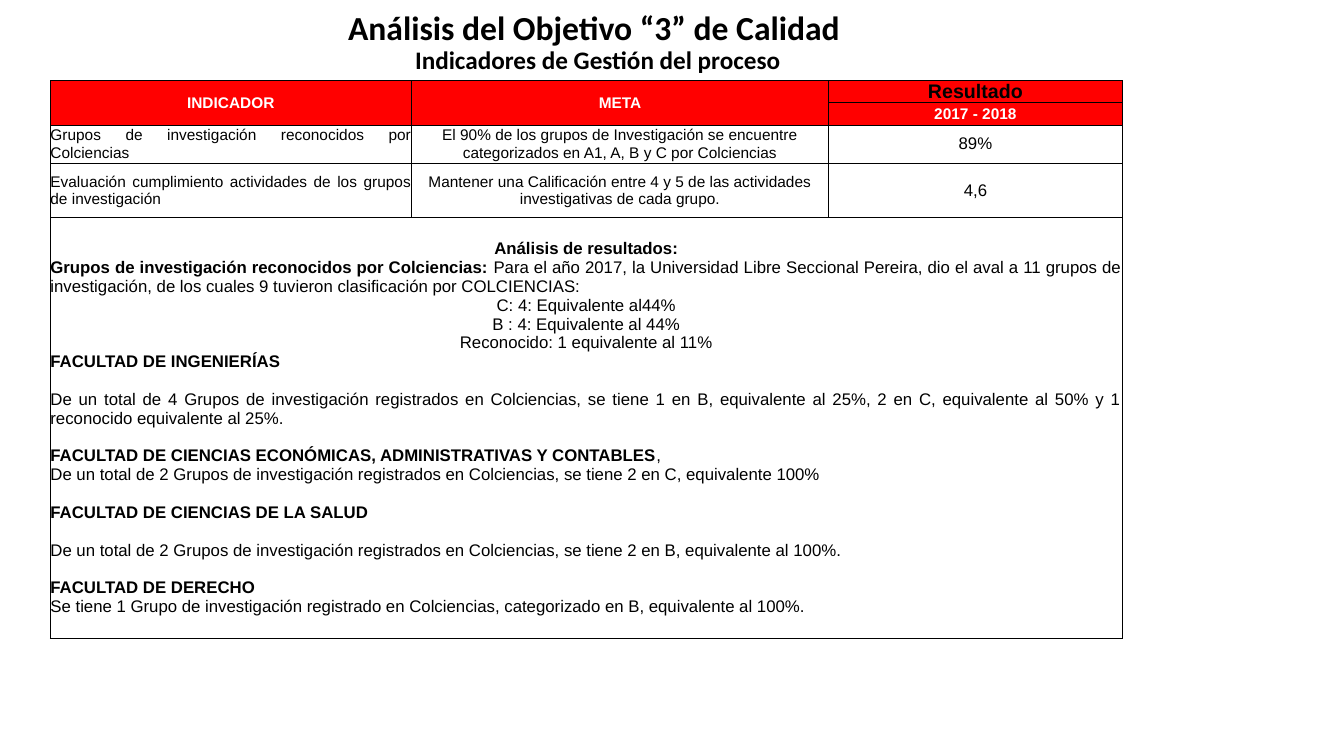
from dataclasses import dataclass

from lxml.etree import SubElement
from pptx import Presentation
from pptx.dml.color import RGBColor
from pptx.enum.text import MSO_ANCHOR as Anchor, MSO_AUTO_SIZE as AutoSize, PP_ALIGN as Align
from pptx.oxml.ns import qn
from pptx.slide import Slide
from pptx.table import Table, _Cell as Cell
from pptx.util import Inches, Pt


@dataclass(frozen=True)
class Theme:
    title_font: str = "Calibri"
    table_font: str = "Arial"
    black: str = "000000"
    white: str = "FFFFFF"
    red: str = "FF0000"
    title: float = 24
    subtitle: float = 18
    result: float = 14
    body: float = 12
    label: float = 11
    gap: float = 13.5
    thin: float = 0.5
    thick: float = 1


THEME = Theme()


@dataclass(frozen=True)
class Span:
    text: str
    bold: bool = False


@dataclass(frozen=True)
class Para:
    spans: tuple[Span, ...]
    align: Align = Align.JUSTIFY
    gap_before: bool = False


@dataclass(frozen=True)
class CellText:
    row: int
    column: int
    paras: tuple[Para, ...]
    size: float = THEME.label
    color: str = THEME.black
    anchor: Anchor = Anchor.MIDDLE


def plain(text: str, align: Align = Align.JUSTIFY, gap: bool = False) -> Para:
    return Para((Span(text),), align, gap)


def strong(text: str, align: Align = Align.JUSTIFY, gap: bool = False) -> Para:
    return Para((Span(text, True),), align, gap)


ANALYSIS = (
    strong("Análisis de resultados:", Align.CENTER),
    Para((
        Span("Grupos de investigación reconocidos por Colciencias: ", True),
        Span("Para el año 2017, la Universidad Libre Seccional Pereira, dio el aval a 11 grupos de "
             "investigación, de los cuales 9 tuvieron clasificación por COLCIENCIAS:"),
    )),
    plain("C: 4: Equivalente al44%", Align.CENTER),
    plain("B : 4: Equivalente al 44%", Align.CENTER),
    plain("Reconocido: 1 equivalente al 11%", Align.CENTER),
    strong("FACULTAD DE INGENIERÍAS", Align.LEFT),
    plain("De un total de 4 Grupos de investigación registrados en Colciencias, se tiene 1 en B, "
          "equivalente al 25%, 2 en C, equivalente al 50% y 1 reconocido equivalente al 25%.", gap=True),
    Para((
        Span("FACULTAD DE CIENCIAS ECONÓMICAS, ADMINISTRATIVAS Y CONTABLES", True),
        Span(","),
    ), gap_before=True),
    plain("De un total de 2 Grupos de investigación registrados en Colciencias, se tiene 2 en C, "
          "equivalente 100%"),
    strong("FACULTAD DE CIENCIAS DE LA SALUD", gap=True),
    plain("De un total de 2 Grupos de investigación registrados en Colciencias, se tiene 2 en B, "
          "equivalente al 100%.", gap=True),
    strong("FACULTAD DE DERECHO", gap=True),
    plain("Se tiene 1 Grupo de investigación registrado en Colciencias, categorizado en B, "
          "equivalente al 100%."),
)

HEADER_ROWS = 2
ANALYSIS_ROW = 4
COLUMN_WIDTHS = (3.58, 4.14, 2.91)
ROW_HEIGHTS = (0.22, 0.22, 0.38, 0.54, 4.17)

CELLS = (
    CellText(0, 0, (strong("INDICADOR", Align.CENTER),), color=THEME.white),
    CellText(0, 1, (strong("META", Align.CENTER),), color=THEME.white),
    CellText(0, 2, (strong("Resultado", Align.CENTER),), THEME.result, anchor=Anchor.BOTTOM),
    CellText(1, 2, (strong("2017 - 2018", Align.CENTER),), color=THEME.white),
    CellText(2, 0, (plain("Grupos de investigación reconocidos por Colciencias"),)),
    CellText(2, 1, (plain("El 90% de los grupos de Investigación se encuentre categorizados en "
                          "A1, A, B y C por Colciencias", Align.CENTER),)),
    CellText(2, 2, (plain("89%", Align.CENTER),), THEME.body),
    CellText(3, 0, (plain("Evaluación cumplimiento actividades de los grupos de investigación"),)),
    CellText(3, 1, (plain("Mantener una Calificación entre 4 y 5 de las actividades investigativas "
                          "de cada grupo.", Align.CENTER),)),
    CellText(3, 2, (plain("4,6", Align.CENTER),), THEME.body),
    CellText(ANALYSIS_ROW, 0, ANALYSIS, THEME.body),
)


def add_run(para, span: Span, font: str, size: float, color: str) -> None:
    run = para.add_run()
    run.text = span.text
    run.font.name = font
    run.font.size = Pt(size)
    run.font.bold = span.bold
    run.font.color.rgb = RGBColor.from_string(color)


def add_title(page: Slide) -> None:
    title = page.shapes.title
    title.left, title.top = Inches(0.5), Inches(0.1)
    title.width, title.height = Inches(10.86), Inches(0.69)
    frame = title.text_frame
    frame.word_wrap = True
    frame.auto_size = AutoSize.NONE
    frame.vertical_anchor = Anchor.BOTTOM
    para = frame.paragraphs[0]
    para.alignment = Align.CENTER
    para.line_spacing = 0.9
    add_run(para, Span("Análisis del Objetivo “3” de Calidad ", True),
            THEME.title_font, THEME.title, THEME.black)
    para.add_line_break()
    add_run(para, Span("Indicadores de Gestión del proceso", True),
            THEME.title_font, THEME.subtitle, THEME.black)


def format_cell(cell: Cell, fill: str, side_width: float) -> None:
    """Remove the margins, draw the four borders and fill the cell."""
    cell.margin_left = cell.margin_right = cell.margin_top = cell.margin_bottom = 0
    properties = cell._tc.get_or_add_tcPr()
    for side in "LRTB":
        width = side_width if side in "LR" else THEME.thin
        line = SubElement(properties, qn(f"a:ln{side}"), w=str(Pt(width)))
        SubElement(SubElement(line, qn("a:solidFill")), qn("a:srgbClr"), val=THEME.black)
    cell.fill.solid()
    cell.fill.fore_color.rgb = RGBColor.from_string(fill)


def write_cell(table: Table, content: CellText) -> None:
    cell = table.cell(content.row, content.column)
    cell.vertical_anchor = content.anchor
    frame = cell.text_frame
    for index, item in enumerate(content.paras):
        para = frame.add_paragraph() if index else frame.paragraphs[0]
        para.alignment = item.align
        if item.gap_before:
            para.space_before = Pt(THEME.gap)
        for span in item.spans:
            add_run(para, span, THEME.table_font, content.size, content.color)


def add_indicator_table(page: Slide) -> None:
    table = page.shapes.add_table(
        len(ROW_HEIGHTS), len(COLUMN_WIDTHS), Inches(0.5), Inches(0.8),
        Inches(sum(COLUMN_WIDTHS)), Inches(sum(ROW_HEIGHTS))).table
    table.first_row = table.horz_banding = False
    for column, width in zip(table.columns, COLUMN_WIDTHS):
        column.width = Inches(width)
    for index, (row, height) in enumerate(zip(table.rows, ROW_HEIGHTS)):
        row.height = Inches(height)
        fill = THEME.red if index < HEADER_ROWS else THEME.white
        side_width = THEME.thick if index == ANALYSIS_ROW else THEME.thin
        for cell in row.cells:
            format_cell(cell, fill, side_width)
    for column in (0, 1):
        table.cell(0, column).merge(table.cell(HEADER_ROWS - 1, column))
    table.cell(ANALYSIS_ROW, 0).merge(table.cell(ANALYSIS_ROW, len(COLUMN_WIDTHS) - 1))
    for content in CELLS:
        write_cell(table, content)


def main() -> None:
    deck = Presentation()
    deck.slide_width, deck.slide_height = Inches(13.33), Inches(7.5)
    page = deck.slides.add_slide(deck.slide_layouts[5])
    add_title(page)
    add_indicator_table(page)
    deck.save("out.pptx")


if __name__ == "__main__":
    main()
